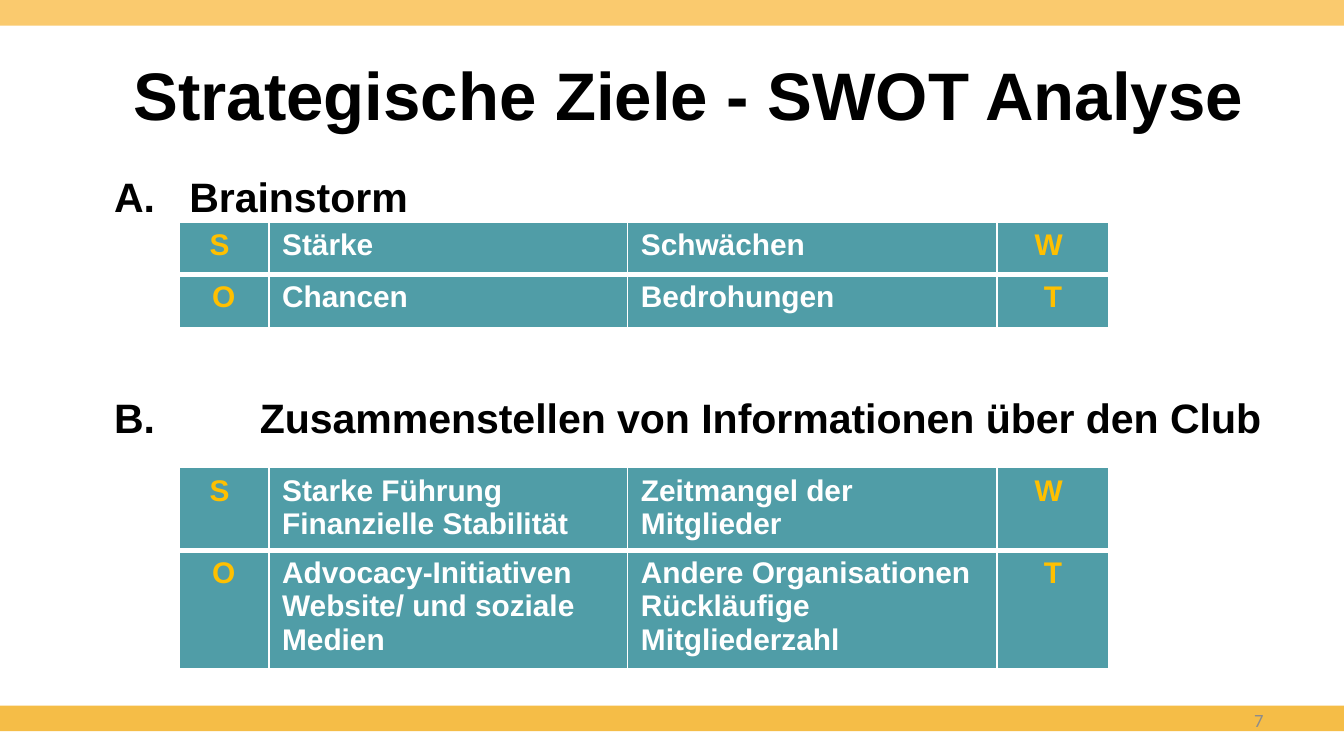
"""Build the SWOT analysis slide with two tables."""
import pptx
import pptx.util
import pptx.dml.color
import pptx.enum.shapes
import pptx.enum.text
import pptx.oxml
import pptx.oxml.ns

Inches, Pt = pptx.util.Inches, pptx.util.Pt
Color = pptx.dml.color.RGBColor
Align = pptx.enum.text.PP_ALIGN
Anchor = pptx.enum.text.MSO_ANCHOR

BLACK = Color(0x00, 0x00, 0x00)
WHITE = Color(0xFF, 0xFF, 0xFF)
GOLD = Color(0xFF, 0xC0, 0x00)
TEAL = Color(0x50, 0x9D, 0xA7)
GRAY = Color(0x8C, 0x8C, 0x8C)
LIGHT = Color(0xFA, 0xCA, 0x6E)
AMBER = Color(0xF5, 0xBD, 0x47)

TITLE = "Strategische Ziele - SWOT Analyse"
HEADS = [
    ("Brainstorm", 0, '<a:buFont {} typeface="+mj-lt"/>', '<a:buAutoNum {} type="alphaUcPeriod"/>'),
    ("B.\t Zusammenstellen von Informationen über den Club", 91.5,
     "<a:buNone {}/>", '<a:tabLst {}><a:tab pos="914400" algn="l"/></a:tabLst>'),
]
BARS = [(0, LIGHT), (5.25, AMBER)]
COLS = [0.67, 2.67, 2.75, 0.83]
TABLES = [
    (3.48, [0.5, 0.66], [
        [["S "], ["Starke Führung", "Finanzielle Stabilität"],
         ["Zeitmangel der Mitglieder"], ["W "]],
        [["O"], ["Advocacy-Initiativen", "Website/ und soziale Medien"],
         ["Andere Organisationen", "Rückläufige Mitgliederzahl"], ["T"]],
    ]),
    (1.65, [0.39, 0.4], [
        [["S "], ["Stärke"], ["Schwächen"], ["W "]],
        [["O"], ["Chancen"], ["Bedrohungen"], ["T"]],
    ]),
]


def make(xml):
    return pptx.oxml.parse_xml(xml.format(pptx.oxml.ns.nsdecls("a")))


def write(para, text, size, color, align=Align.LEFT, bold=True, face="Arial"):
    para.alignment = align
    run = para.add_run()
    run.text = text
    font = run.font
    font.name, font.size, font.bold = face, Pt(size), bold
    font.color.rgb = color


def edge(cell, row):
    top, low = (1, 3) if row == 0 else (3, 1)
    props = cell._tc.get_or_add_tcPr()
    for at, (side, wide) in enumerate(zip("LRTB", (1, 1, top, low))):
        props.insert(at, make(
            f'<a:ln{side} {{}} w="{Pt(wide)}"><a:solidFill>'
            f'<a:srgbClr val="{WHITE}"/></a:solidFill></a:ln{side}>'))


def add_grid(slide, top, highs, rows):
    table = slide.shapes.add_table(
        len(rows), len(COLS), Inches(1.33), Inches(top),
        Inches(sum(COLS)), Inches(sum(highs))).table
    for col, wide in zip(table.columns, COLS):
        col.width = Inches(wide)
    for r, (row, high) in enumerate(zip(rows, highs)):
        table.rows[r].height = Inches(high)
        for c, lines in enumerate(row):
            cell = table.cell(r, c)
            cell.margin_bottom = Inches(0.03)
            cell.fill.solid()
            cell.fill.fore_color.rgb = TEAL
            edge(cell, r)
            mark = c in (0, len(COLS) - 1)
            for i, line in enumerate(lines):
                frame = cell.text_frame
                para = frame.add_paragraph() if i else frame.paragraphs[0]
                write(para, line, 16, GOLD if mark else WHITE,
                      Align.CENTER if mark else Align.LEFT)


def main():
    deck = pptx.Presentation()
    deck.slide_width = Inches(10)
    deck.slide_height = deck.slide_width * 9 // 16
    slide = deck.slides.add_slide(deck.slide_layouts[5])

    for top, color in BARS:
        bar = slide.shapes.add_shape(
            pptx.enum.shapes.MSO_SHAPE.RECTANGLE,
            0, Inches(top), Inches(10), Inches(0.19))
        bar.shadow.inherit = False
        bar.fill.solid()
        bar.fill.fore_color.rgb = color
        bar.line.fill.background()

    title = slide.shapes.title
    title.left, title.top = Inches(0.75), Inches(0.23)
    title.width, title.height = Inches(8.75), Inches(0.94)
    title.text_frame.vertical_anchor = Anchor.MIDDLE
    write(title.text_frame.paragraphs[0], TITLE, 36, BLACK, Align.CENTER)

    body = slide.shapes.add_textbox(
        Inches(0.75), Inches(1.23), Inches(8.75), Inches(3.92)).text_frame
    body.word_wrap = True
    for i, (text, gap, *marks) in enumerate(HEADS):
        para = body.add_paragraph() if i else body.paragraphs[0]
        props = para._p.get_or_add_pPr()
        for mark in marks:
            props.append(make(mark))
        if gap:
            para.space_before = Pt(gap)
        else:
            props.set("marL", str(Inches(0.56)))
            props.set("indent", str(-Inches(0.56)))
        write(para, text, 22, BLACK)

    page = slide.shapes.add_textbox(
        Inches(7.17), Inches(5.21), Inches(2.33), Inches(0.3)).text_frame
    page.word_wrap = True
    page.vertical_anchor = Anchor.MIDDLE
    write(page.paragraphs[0], "7", 10, GRAY, Align.RIGHT, False, "Calibri")

    for top, highs, rows in TABLES:
        add_grid(slide, top, highs, rows)

    deck.save("out.pptx")


if __name__ == "__main__":
    main()
